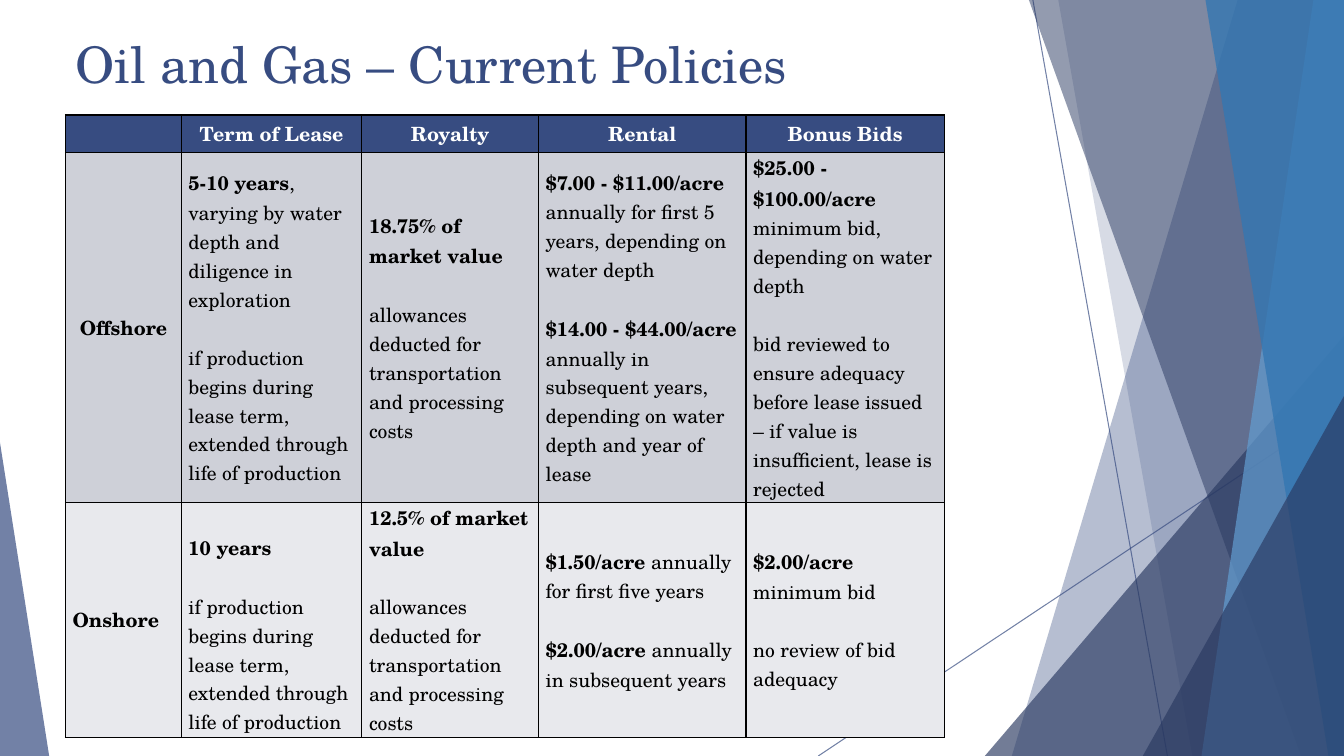
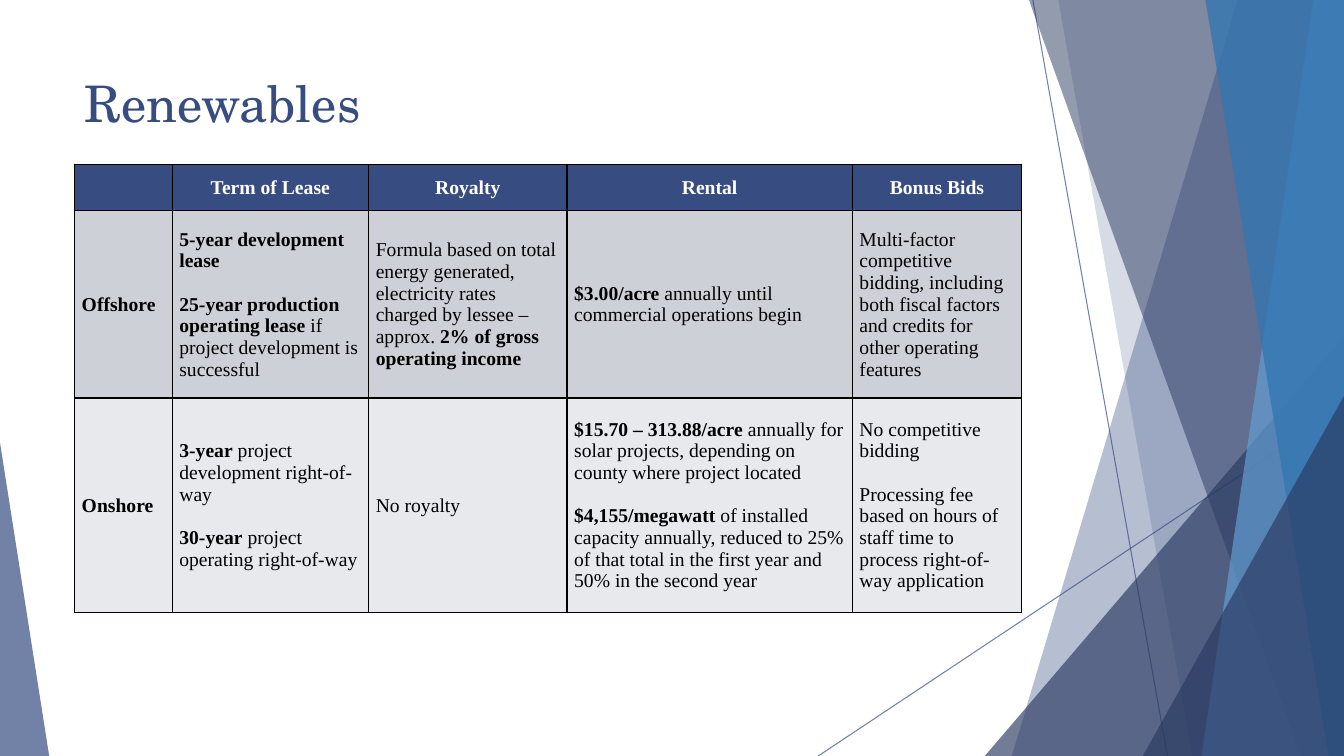
from dataclasses import dataclass

from lxml.etree import SubElement
from pptx import Presentation
from pptx.dml.color import RGBColor
from pptx.enum.shapes import MSO_CONNECTOR, MSO_SHAPE
from pptx.enum.text import MSO_ANCHOR, PP_ALIGN
from pptx.oxml.ns import qn
from pptx.util import Cm, Pt


@dataclass(frozen=True)
class Theme:
    navy: str = "374C81"
    deep_navy: str = "293961"
    sky: str = "629DD1"
    blue: str = "3477B2"
    white: str = "FFFFFF"
    black: str = "000000"
    row_fills: tuple = ("374C81", "CED0D8", "E8E9ED")
    title_font: str = "TeX Gyre Schola"
    title_size: int = 36
    table_size: int = 14
    thin_line: float = 0.75
    border: int = 1
    cell_margin: float = 0.18


THEME = Theme()
SLIDE_WIDTH, SLIDE_HEIGHT = 33.87, 19.05

# Lines: start x, start y, end x, end y
LINES = [(26.03, 0, 29.42, 19.05), (33.87, 10.24, 20.62, 19.05)]

# Bands run to the right edge: top left x, bottom left x, colour, opacity
# Triangles stand on the bottom edge: left, top, width, apex, colour, opacity
DECORATION = [
    ("band", 31.19, 25.5, THEME.navy, 36),
    ("band", 26.67, 30.05, THEME.navy, 20),
    ("triangle", 24.82, 8.46, 9.05, 1, THEME.deep_navy, 66),
    ("band", 25.93, 32.79, THEME.deep_navy, 50),
    ("band", 33.1, 30.28, THEME.sky, 70),
    ("band", 30.38, 33.48, THEME.blue, 80),
    ("triangle", 28.8, 9.98, 5.07, 1, THEME.deep_navy, 66),
    ("triangle", 0, 11.15, 1.24, 0, THEME.navy, 70),
]

HEADER = [[], ["**Term of Lease**"], ["**Royalty**"], ["**Rental**"], ["**Bonus Bids**"]]
EXTENSION = "if production begins during lease term, extended through life of production"
ALLOWANCES = "allowances deducted for transportation and processing costs"

# Each cell is a list of paragraphs; ** switches bold on and off
SLIDES = [
    {
        "title": "Oil and Gas – Current Policies",
        "title_box": (1.65, 0.71, 21.69, 1.88),
        "table_at": (1.65, 2.9),
        "columns": [2.92, 4.55, 4.45, 5.23, 5],
        "heights": [0.95, 8.81, 5.92],
        "font": "TeX Gyre Schola",
        "paragraph_gap": 20.8,
        "margins": {(1, 0): ("margin_left", 0.36), (2, 1): ("margin_top", 0.73)},
        "rows": [
            HEADER,
            [
                ["**Offshore**"],
                ["**5-10 years**, varying by water depth and diligence in exploration",
                 EXTENSION],
                ["**18.75% of market value**", ALLOWANCES],
                ["**$7.00 - $11.00/acre **annually for first 5 years, depending on water depth",
                 "**$14.00 - $44.00/acre **annually in subsequent years, "
                 "depending on water depth and year of lease"],
                ["**$25.00 - $100.00/acre **minimum bid, depending on water depth",
                 "bid reviewed to ensure adequacy before lease issued "
                 "– if value is insufficient, lease is rejected"],
            ],
            [
                ["**Onshore**"],
                ["**10 years**", EXTENSION],
                ["**12.5% of market value**", ALLOWANCES],
                ["**$1.50/acre **annually for first five years",
                 "**$2.00/acre **annually in subsequent years"],
                ["**$2.00/acre **minimum bid", "no review of bid adequacy"],
            ],
        ],
    },
    {
        "title": "Renewables",
        "title_box": (1.88, 1.7, 23.88, 3.66),
        "table_at": (1.88, 4.14),
        "columns": [2.46, 4.95, 5, 7.19, 4.27],
        "heights": [1.17, 4.72, 5.41],
        "font": "Times New Roman",
        "paragraph_gap": 15.5,
        "margins": {},
        "rows": [
            HEADER,
            [
                ["**Offshore**"],
                ["**5-year development lease**",
                 "**25-year production operating lease **if project development is successful"],
                ["Formula based on total energy generated, electricity rates "
                 "charged by lessee – approx. **2% of gross operating income**"],
                ["**$3.00/acre **annually until commercial operations begin"],
                ["Multi-factor competitive bidding, including both fiscal factors "
                 "and credits for other operating features"],
            ],
            [
                ["**Onshore**"],
                ["**3-year** project development right-of-way",
                 "**30-year** project operating right-of-way"],
                ["No royalty"],
                ["**$15.70 – 313.88/acre **annually for solar projects, "
                 "depending on county where project located",
                 "**$4,155/megawatt **of installed capacity annually, reduced to 25% "
                 "of that total in the first year and 50% in the second year"],
                ["No competitive bidding",
                 "Processing fee based on hours of staff time "
                 "to process right-of-way application"],
            ],
        ],
    },
]


def set_colour(fill, colour, opacity=100):
    fill.solid()
    fill.fore_color.rgb = RGBColor.from_string(colour)
    if opacity < 100:
        srgb = next(fill._xPr.iter(qn("a:srgbClr")))
        SubElement(srgb, qn("a:alpha")).set("val", str(opacity * 1000))


def add_run(paragraph, text, font, size, colour, bold=False):
    run = paragraph.add_run()
    run.text = text
    run.font.name = font
    run.font.size = Pt(size)
    run.font.bold = bold
    run.font.color.rgb = RGBColor.from_string(colour)


def add_line(slide, points):
    line = slide.shapes.add_connector(MSO_CONNECTOR.STRAIGHT, *map(Cm, points))
    line.line.width = Pt(THEME.thin_line)
    set_colour(line.line.fill, THEME.navy, 70)
    SubElement(line._element.spPr, qn("a:effectLst"))


def add_band(slide, top_x, bottom_x):
    outline = slide.shapes.build_freeform(Cm(top_x), Cm(0))
    corners = [(SLIDE_WIDTH, 0), (SLIDE_WIDTH, SLIDE_HEIGHT), (bottom_x, SLIDE_HEIGHT)]
    outline.add_line_segments([(Cm(x), Cm(y)) for x, y in corners])
    return outline.convert_to_shape()


def add_triangle(slide, left, top, width, apex):
    triangle = slide.shapes.add_shape(
        MSO_SHAPE.ISOSCELES_TRIANGLE, Cm(left), Cm(top), Cm(width), Cm(SLIDE_HEIGHT - top))
    triangle.adjustments[0] = apex
    return triangle


def decorate(slide):
    for points in LINES:
        add_line(slide, points)
    builders = {"band": add_band, "triangle": add_triangle}
    for kind, *geometry, colour, opacity in DECORATION:
        shape = builders[kind](slide, *geometry)
        set_colour(shape.fill, colour, opacity)
        shape.line.fill.background()
        shape.shadow.inherit = False


def add_title(slide, text, box):
    frame = slide.shapes.add_textbox(*map(Cm, box)).text_frame
    frame.word_wrap = True
    frame.vertical_anchor = MSO_ANCHOR.TOP
    add_run(frame.paragraphs[0], text, THEME.title_font, THEME.title_size, THEME.navy)


def set_borders(cell):
    properties = cell._tc.get_or_add_tcPr()
    for position, side in enumerate(("lnL", "lnR", "lnT", "lnB")):
        border = properties.makeelement(qn(f"a:{side}"), {"w": str(Pt(THEME.border))})
        solid = SubElement(border, qn("a:solidFill"))
        SubElement(solid, qn("a:srgbClr")).set("val", THEME.black)
        properties.insert(position, border)


def fill_cell(cell, paragraphs, font, gap, is_header):
    frame = cell.text_frame
    for index, text in enumerate(paragraphs):
        paragraph = frame.add_paragraph() if index else frame.paragraphs[0]
        paragraph.alignment = PP_ALIGN.CENTER if is_header else PP_ALIGN.LEFT
        paragraph.space_before = Pt(gap if index else 0)
        colour = THEME.white if is_header else THEME.black
        for part, words in enumerate(text.split("**")):
            if words:
                add_run(paragraph, words, font, THEME.table_size, colour, part % 2 == 1)


def add_policy_table(slide, content):
    columns, heights = content["columns"], content["heights"]
    table = slide.shapes.add_table(
        len(heights), len(columns), *map(Cm, content["table_at"]),
        Cm(sum(columns)), Cm(sum(heights))).table
    for column, width in zip(table.columns, columns):
        column.width = Cm(width)
    for row, height in zip(table.rows, heights):
        row.height = Cm(height)
    for row_index, row in enumerate(content["rows"]):
        for column_index, paragraphs in enumerate(row):
            cell = table.cell(row_index, column_index)
            cell.vertical_anchor = MSO_ANCHOR.MIDDLE
            cell.margin_left = cell.margin_right = Cm(THEME.cell_margin)
            cell.margin_top = cell.margin_bottom = Cm(0)
            if (row_index, column_index) in content["margins"]:
                side, margin = content["margins"][row_index, column_index]
                setattr(cell, side, Cm(margin))
            set_colour(cell.fill, THEME.row_fills[row_index])
            set_borders(cell)
            fill_cell(cell, paragraphs, content["font"],
                      content["paragraph_gap"], row_index == 0)


def main():
    presentation = Presentation()
    presentation.slide_width = Cm(SLIDE_WIDTH)
    presentation.slide_height = Cm(SLIDE_HEIGHT)
    for content in SLIDES:
        slide = presentation.slides.add_slide(presentation.slide_layouts[6])
        decorate(slide)
        add_title(slide, content["title"], content["title_box"])
        add_policy_table(slide, content)
    presentation.save("out.pptx")


if __name__ == "__main__":
    main()
